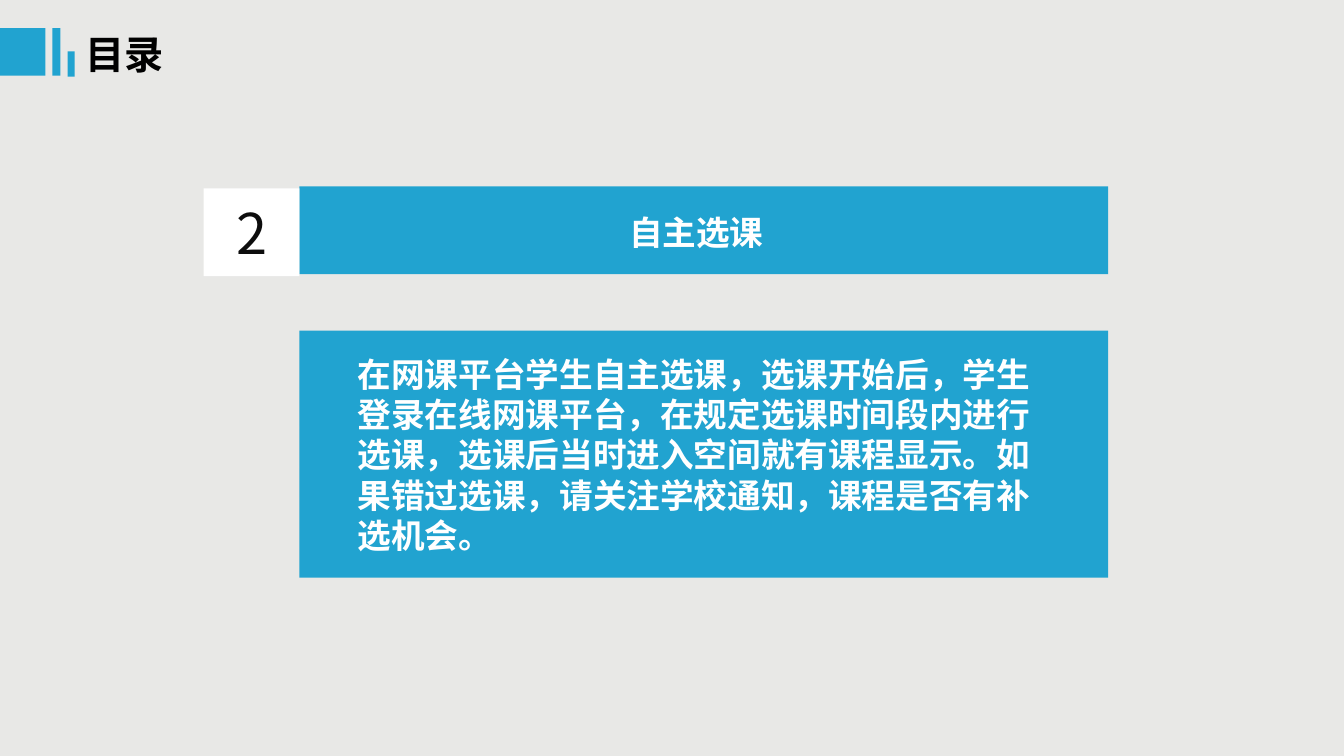
from dataclasses import dataclass

import lxml.etree
import pptx
import pptx.dml.color
import pptx.enum.shapes
import pptx.enum.text
import pptx.oxml.ns
import pptx.shapes.autoshape
import pptx.slide
import pptx.util

FONT = "Noto Sans CJK SC"
BLUE = "21A3D0"
WHITE = "FFFFFF"
BLACK = "000000"
DARK = "0D0D0D"
BACKGROUND = "E8E8E6"
LINE_HEIGHT = 1.2
PANEL_LEFT, PANEL_WIDTH = 2.97, 8.02
BADGE_WIDTH, HEADING_HEIGHT = 0.95, 0.87


@dataclass
class Box:
    left: float
    top: float
    width: float
    height: float
    fill: str = BLUE


@dataclass
class Label:
    text: str
    left: float
    top: float
    width: float
    height: float
    size: int
    color: str


HEADER_BARS = [
    Box(0, 0.28, 0.45, 0.47),
    Box(0.52, 0.28, 0.08, 0.47),
    Box(0.67, 0.51, 0.07, 0.25),
]
BODY_PANEL = Box(PANEL_LEFT, 3.28, PANEL_WIDTH, 2.45)
HEADING_PANEL = Box(PANEL_LEFT, 1.85, PANEL_WIDTH, HEADING_HEIGHT)
NUMBER_BADGE = Box(PANEL_LEFT - BADGE_WIDTH, 1.87, BADGE_WIDTH, HEADING_HEIGHT, WHITE)

BODY_TEXT = (
    "在网课平台学生自主选课，选课开始后，学生登录在线网课平台，"
    "在规定选课时间段内进行选课，选课后当时进入空间就有课程显示。"
    "如果错过选课，请关注学校通知，课程是否有补选机会。"
)
LABELS = [
    Label("目录", 0.75, 0.25, 1.27, 0.57, 28, BLACK),
    Label(BODY_TEXT, 3.45, 3.46, 7.18, 2.12, 24, WHITE),
    Label("自主选课", 6.14, 2.05, 1.81, 0.5, 24, WHITE),
]


def rgb(value: str) -> pptx.dml.color.RGBColor:
    return pptx.dml.color.RGBColor.from_string(value)


def write_text(
    shape: pptx.shapes.autoshape.Shape,
    text: str,
    *,
    size: int,
    color: str,
    bold: bool = False,
    align: pptx.enum.text.PP_ALIGN = pptx.enum.text.PP_ALIGN.LEFT,
    anchor: pptx.enum.text.MSO_ANCHOR = pptx.enum.text.MSO_ANCHOR.TOP,
) -> None:
    frame = shape.text_frame
    frame.word_wrap = True
    frame.vertical_anchor = anchor
    paragraph = frame.paragraphs[0]
    paragraph.alignment = align
    paragraph.line_spacing = pptx.util.Pt(size * LINE_HEIGHT)
    run = paragraph.add_run()
    run.text = text
    run.font.size = pptx.util.Pt(size)
    run.font.bold = bold
    run.font.color.rgb = rgb(color)
    run.font.name = FONT
    properties = run._r.get_or_add_rPr()
    lxml.etree.SubElement(properties, pptx.oxml.ns.qn("a:ea"), typeface=FONT)


def frame_lengths(item: Box | Label) -> list[pptx.util.Length]:
    return [pptx.util.Inches(length) for length in (item.left, item.top, item.width, item.height)]


def draw_box(slide: pptx.slide.Slide, box: Box) -> pptx.shapes.autoshape.Shape:
    shape = slide.shapes.add_shape(
        pptx.enum.shapes.MSO_SHAPE.RECTANGLE, *frame_lengths(box)
    )
    shape.shadow.inherit = False
    shape.fill.solid()
    shape.fill.fore_color.rgb = rgb(box.fill)
    shape.line.fill.background()
    return shape


def draw_label(slide: pptx.slide.Slide, label: Label) -> None:
    shape = slide.shapes.add_textbox(*frame_lengths(label))
    write_text(shape, label.text, size=label.size, color=label.color, bold=True)


def main() -> None:
    presentation = pptx.Presentation()
    presentation.slide_width = pptx.util.Inches(13.33)
    presentation.slide_height = pptx.util.Inches(7.5)
    slide = presentation.slides.add_slide(presentation.slide_layouts[6])
    slide.background.fill.solid()
    slide.background.fill.fore_color.rgb = rgb(BACKGROUND)

    for box in [*HEADER_BARS, BODY_PANEL, HEADING_PANEL]:
        draw_box(slide, box)
    write_text(
        draw_box(slide, NUMBER_BADGE),
        "2",
        size=40,
        color=DARK,
        align=pptx.enum.text.PP_ALIGN.CENTER,
        anchor=pptx.enum.text.MSO_ANCHOR.MIDDLE,
    )
    for label in LABELS:
        draw_label(slide, label)

    presentation.save("out.pptx")


if __name__ == "__main__":
    main()
